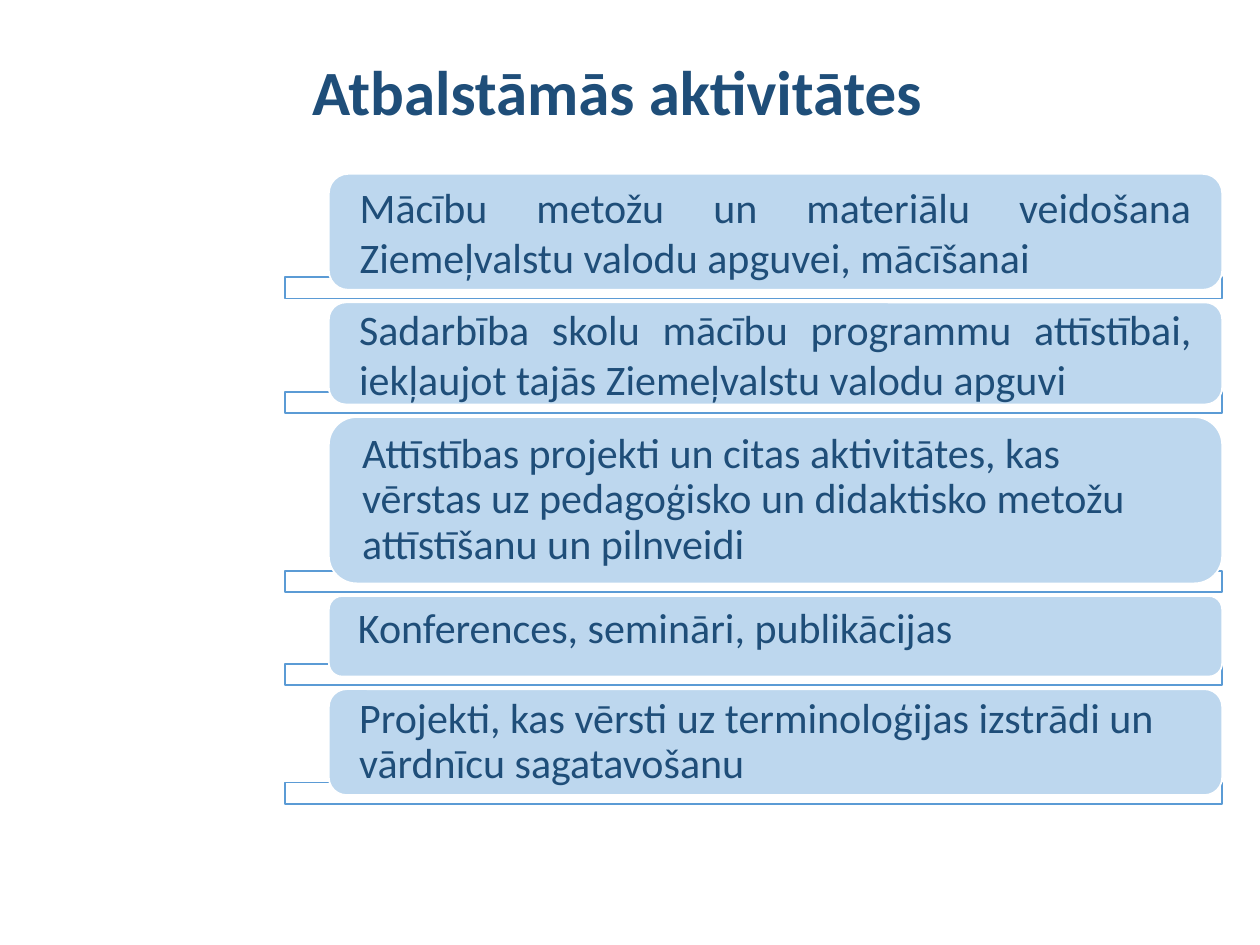
from lxml import etree
from pptx import Presentation
from pptx.dml.color import RGBColor
from pptx.enum.shapes import MSO_SHAPE
from pptx.enum.text import MSO_ANCHOR, PP_ALIGN
from pptx.oxml.ns import qn
from pptx.util import Inches, Pt

NAVY = RGBColor(0x1F, 0x4E, 0x79)
BLUE = RGBColor(0x5B, 0x9B, 0xD5)
PALE_BLUE = RGBColor(0xBD, 0xD7, 0xEE)
WHITE = RGBColor(0xFF, 0xFF, 0xFF)


class SlideBuilder:
    """Holds the text style and the current slide."""

    font = "Calibri"
    text_color = NAVY

    def __init__(self, page):
        self.page = page

    def add_text(self, frame, text, size, bold=False, align=PP_ALIGN.LEFT, spacing=1.0):
        frame.word_wrap = True
        frame.vertical_anchor = MSO_ANCHOR.MIDDLE
        para = frame.paragraphs[0]
        para.alignment = align
        para.line_spacing = spacing
        span = para.add_run()
        span.text = text
        span.font.name = self.font
        span.font.size = Pt(size)
        span.font.bold = bold
        span.font.color.rgb = self.text_color

    def title(self, text, left, top, width, height):
        box = self.page.shapes.add_textbox(
            Inches(left), Inches(top), Inches(width), Inches(height))
        self.add_text(box.text_frame, text, 36, bold=True, spacing=0.9)

    def shape(self, kind, left, top, width, height, fill, line):
        box = self.page.shapes.add_shape(
            kind, Inches(left), Inches(top), Inches(width), Inches(height))
        box.shadow.inherit = False
        box.fill.solid()
        box.fill.fore_color.rgb = fill
        box.line.color.rgb = line
        box.line.width = Pt(1)
        return box

    def bar(self, left, top, width, height):
        box = self.shape(MSO_SHAPE.RECTANGLE, left, top, width, height, WHITE, BLUE)
        # Fill at 90 % opacity
        color = box.element.spPr.find(qn("a:solidFill"))[0]
        etree.SubElement(color, qn("a:alpha")).set("val", "90000")

    def card(self, text, left, top, width, height, align, spacing, bottom_inset):
        box = self.shape(MSO_SHAPE.ROUNDED_RECTANGLE, left, top, width, height,
                         PALE_BLUE, WHITE)
        frame = box.text_frame
        frame.margin_left = frame.margin_right = Inches(0.2)
        frame.margin_top = Inches(0)
        frame.margin_bottom = Inches(bottom_inset)
        self.add_text(frame, text, 24, align=align, spacing=spacing)


# Text, card height, alignment, line spacing, bottom inset
ACTIVITIES = [
    ("Mācību metožu un materiālu veidošana Ziemeļvalstu valodu apguvei, mācīšanai",
     0.92, PP_ALIGN.JUSTIFY, 1.0, 0),
    ("Sadarbība skolu mācību programmu attīstībai, iekļaujot tajās "
     "Ziemeļvalstu valodu apguvi",
     0.81, PP_ALIGN.JUSTIFY, 1.0, 0),
    ("Attīstības projekti un citas aktivitātes, kas vērstas uz pedagoģisko "
     "un didaktisko metožu attīstīšanu un pilnveidi",
     1.32, PP_ALIGN.LEFT, 0.9, 0),
    ("Konferences, semināri, publikācijas", 0.64, PP_ALIGN.JUSTIFY, 1.0, 0.15),
    ("Projekti, kas vērsti uz terminoloģijas izstrādi un vārdnīcu sagatavošanu",
     0.84, PP_ALIGN.LEFT, 0.9, 0),
]
GAP = 0.1


def main():
    deck = Presentation()
    deck.slide_width = Inches(10)
    deck.slide_height = Inches(7.5)
    builder = SlideBuilder(deck.slides.add_slide(deck.slide_layouts[6]))

    # Title
    builder.title("Atbalstāmās aktivitātes", 2.38, 0.4, 6.93, 0.71)

    # Activity list: each card overlaps the bar behind its lower edge
    top = 1.38
    for text, height, align, spacing, bottom_inset in ACTIVITIES:
        bottom = top + height
        builder.bar(2.26, bottom - GAP, 7.44, 0.17)
        builder.card(text, 2.61, top, 7.09, height, align, spacing, bottom_inset)
        top = bottom + GAP

    deck.save("out.pptx")


if __name__ == "__main__":
    main()
